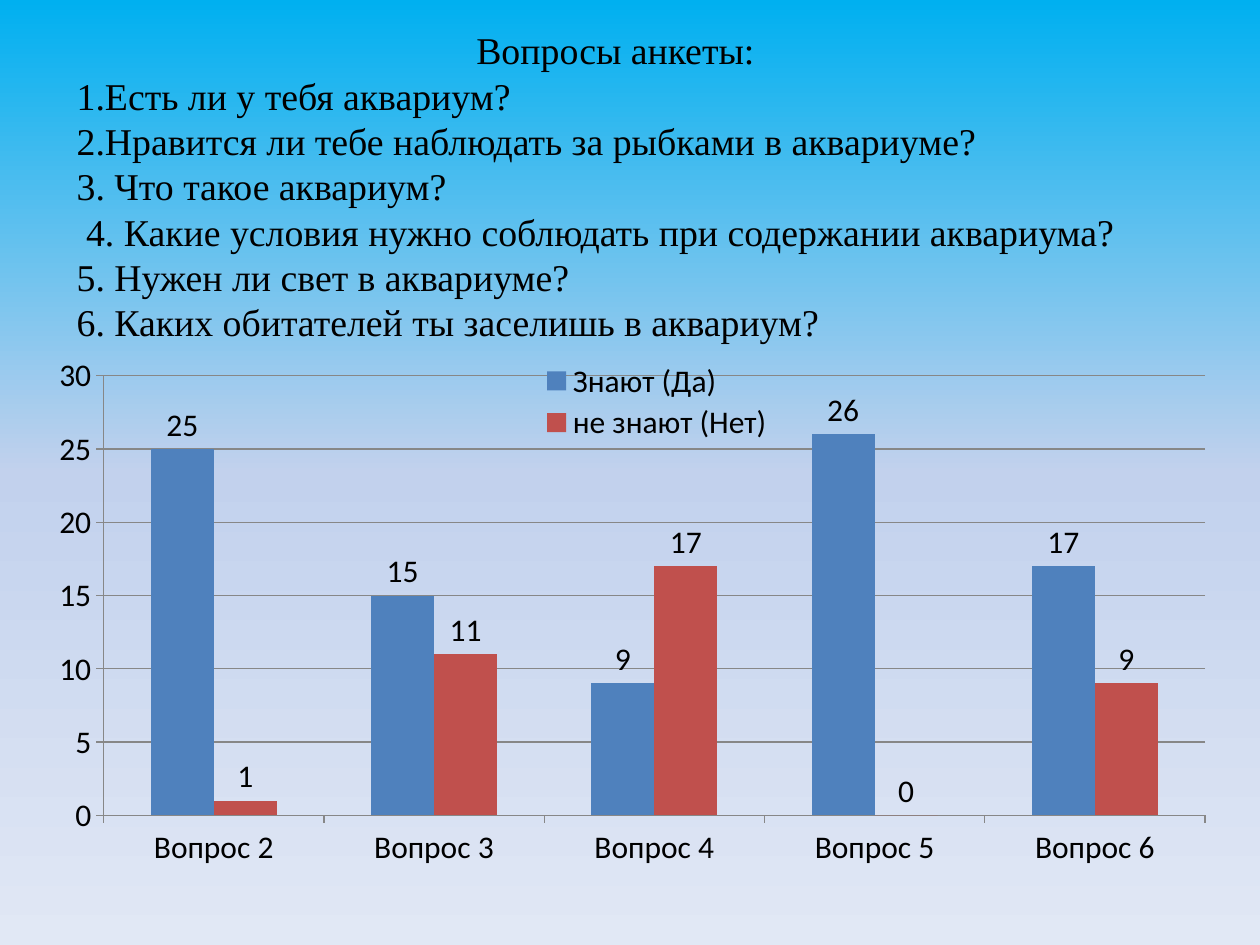
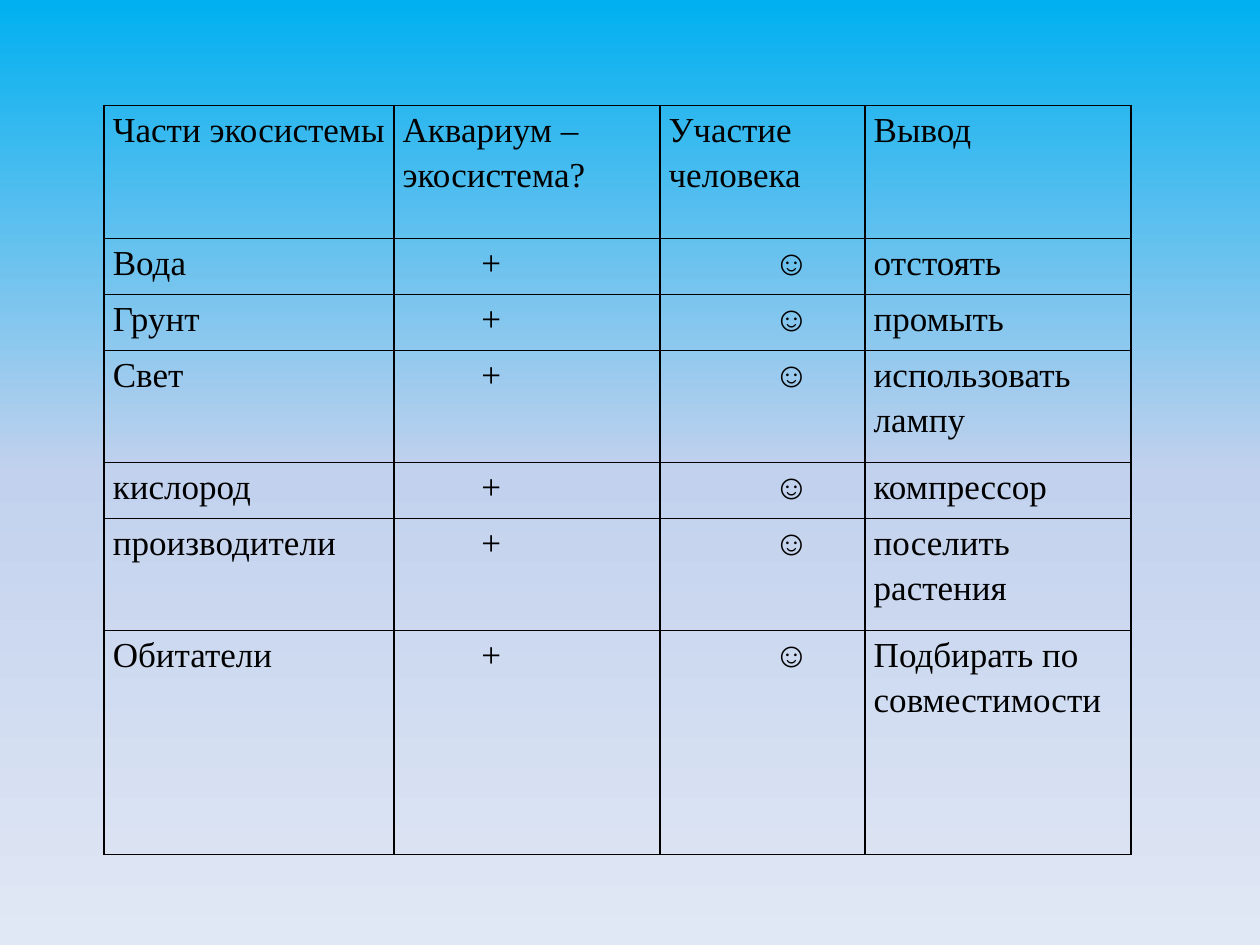
from copy import deepcopy
from dataclasses import dataclass

from pptx import Presentation
from pptx.chart.data import CategoryChartData
from pptx.dml.color import RGBColor
from pptx.enum.chart import XL_CHART_TYPE, XL_LABEL_POSITION, XL_LEGEND_POSITION, XL_TICK_MARK
from pptx.enum.text import MSO_ANCHOR, PP_ALIGN
from pptx.oxml import parse_xml
from pptx.oxml.ns import nsdecls, qn
from pptx.util import Pt

COLUMNS = XL_CHART_TYPE.COLUMN_CLUSTERED
OUTSIDE_END = XL_LABEL_POSITION.OUTSIDE_END
LEGEND_RIGHT = XL_LEGEND_POSITION.RIGHT
TICK_OUTSIDE = XL_TICK_MARK.OUTSIDE
MIDDLE = MSO_ANCHOR.MIDDLE
CENTER, JUSTIFY = PP_ALIGN.CENTER, PP_ALIGN.JUSTIFY


@dataclass(frozen=True)
class Theme:
    gradient: tuple = ((0, "00B0F0"), (0.5, "C2D1ED"), (1, "E1E8F5"))
    text: str = "000000"
    grid: str = "878787"
    series: tuple = ("4F81BD", "C0504D")
    serif: str = "Times New Roman"
    sans: str = "Calibri"
    question_size: float = 21.6
    table_size: float = 20
    chart_size: float = 18


THEME = Theme()

# Survey content
HEADING = "Вопросы анкеты:"
QUESTIONS = [
    "1.Есть ли у тебя аквариум?",
    "2.Нравится ли тебе наблюдать за рыбками в аквариуме?",
    "3. Что такое аквариум?",
    " 4. Какие условия нужно соблюдать при содержании аквариума?",
    "5. Нужен ли свет в аквариуме?",
    "6. Каких обитателей ты заселишь в аквариум?",
]
ANSWERS = {"Знают (Да)": (25, 15, 9, 26, 17), "не знают (Нет)": (1, 11, 17, 0, 9)}

# Ecosystem content
HEADERS = ["Части экосистемы", "Аквариум – экосистема?", "Участие человека", "Вывод"]
CONCLUSIONS = {
    "Вода": "отстоять",
    "Грунт": "промыть",
    "Свет": "использовать лампу",
    "кислород": "компрессор",
    "производители": "поселить растения",
    "Обитатели": "Подбирать по совместимости",
}
COLUMN_WIDTHS = (165.6, 152, 117.2, 152)
COLUMN_INDENTS = (0, 45, 60, 0)
HEADER_HEIGHT, ROW_UNIT = 76, 32
ROW_UNITS = (1, 1, 2, 1, 2, 4)


def set_all(obj, **values):
    for name, value in values.items():
        setattr(obj, name, value)


def style_font(font, name, size):
    set_all(font, name=name, size=Pt(size))
    font.color.rgb = RGBColor.from_string(THEME.text)


def set_indent(p, left, first=0):
    pPr = p._p.get_or_add_pPr()
    pPr.set("marL", str(Pt(left)))
    pPr.set("indent", str(Pt(first)))


def set_background(master):
    fill = master.background.fill
    fill.gradient()
    fill.gradient_angle = 270
    stops = master.element.xpath(".//p:bg//a:gsLst")[0]
    stops.append(deepcopy(stops[0]))
    for stop, (position, color) in zip(fill.gradient_stops, THEME.gradient):
        stop.position = position
        stop.color.rgb = RGBColor.from_string(color)


def add_questions(slide, left, top, width, height):
    tf = slide.shapes.add_textbox(Pt(left), Pt(top), Pt(width), Pt(height)).text_frame
    set_all(tf, word_wrap=True, vertical_anchor=MIDDLE, margin_bottom=Pt(27.6))
    for i, text in enumerate([HEADING, *QUESTIONS]):
        p = tf.add_paragraph() if i else tf.paragraphs[0]
        p.alignment = JUSTIFY if i else CENTER
        if i:
            set_indent(p, 36, -36)
        r = p.add_run()
        r.text = text
        style_font(r.font, THEME.serif, THEME.question_size)


# Chart
def set_layout(element, index, target="", **box):
    """Place a chart part by fractions of the chart frame."""
    for old in element.findall(qn("c:layout")):
        element.remove(old)
    inner = f'<c:layoutTarget val="{target}"/>' if target else ""
    modes = "".join(f'<c:{k}Mode val="edge"/>' for k in "xy")
    sizes = "".join(f'<c:{k} val="{v}"/>' for k, v in box.items())
    element.insert(index, parse_xml(
        f'<c:layout {nsdecls("c")}><c:manualLayout>{inner}{modes}{sizes}'
        "</c:manualLayout></c:layout>"))


def style_line(line):
    line.color.rgb = RGBColor.from_string(THEME.grid)
    line.width = Pt(0.75)


def add_answer_chart(slide, left, top, width, height):
    data = CategoryChartData()
    data.categories = [f"Вопрос {n}" for n in range(2, 7)]
    for name, values in ANSWERS.items():
        data.add_series(name, values)
    chart = slide.shapes.add_chart(
        COLUMNS, Pt(left), Pt(top), Pt(width), Pt(height), data).chart
    set_all(chart, has_title=False, has_legend=True)
    style_font(chart.font, THEME.sans, THEME.chart_size)

    set_all(chart.legend, position=LEGEND_RIGHT, include_in_layout=False)
    set_layout(chart.legend._element, 1, x=0.45, y=0.04, w=0.19, h=0.15)
    set_layout(chart._chartSpace.chart.plotArea, 0, "inner",
               x=0.086, y=0.07, w=0.914, h=0.759)

    for axis in (chart.category_axis, chart.value_axis):
        axis.major_tick_mark = TICK_OUTSIDE
        style_line(axis.format.line)
    set_all(chart.value_axis, minimum_scale=0, maximum_scale=30, major_unit=5,
            has_major_gridlines=True)
    style_line(chart.value_axis.major_gridlines.format.line)

    plot = chart.plots[0]
    set_all(plot, gap_width=150, overlap=0, vary_by_categories=False, has_data_labels=True)
    set_all(plot.data_labels, show_value=True, position=OUTSIDE_END)
    for series, color in zip(plot.series, THEME.series):
        series.invert_if_negative = False
        series.format.fill.solid()
        series.format.fill.fore_color.rgb = RGBColor.from_string(color)


# Table
def add_borders(cell):
    tcPr = cell._tc.get_or_add_tcPr()
    for i, side in enumerate(("lnL", "lnR", "lnT", "lnB")):
        tcPr.insert(i, parse_xml(
            f'<a:{side} {nsdecls("a")} w="{Pt(1)}"><a:solidFill>'
            f'<a:srgbClr val="{THEME.text}"/></a:solidFill></a:{side}>'))


def fill_cell(cell, text, indent):
    set_all(cell, margin_left=Pt(5), margin_right=Pt(5), margin_top=0, margin_bottom=0)
    cell.fill.background()
    add_borders(cell)
    p = cell.text_frame.paragraphs[0]
    p.line_spacing = 1.15
    set_indent(p, indent)
    r = p.add_run()
    r.text = text
    style_font(r.font, THEME.serif, THEME.table_size)


def add_ecosystem_table(slide, left, top):
    rows = [HEADERS] + [[part, "+", "☺", end] for part, end in CONCLUSIONS.items()]
    heights = [HEADER_HEIGHT] + [ROW_UNIT * n for n in ROW_UNITS]
    table = slide.shapes.add_table(
        len(rows), len(HEADERS), Pt(left), Pt(top),
        Pt(sum(COLUMN_WIDTHS)), Pt(sum(heights))).table
    set_all(table, first_row=False, horz_banding=False)
    for column, width in zip(table.columns, COLUMN_WIDTHS):
        column.width = Pt(width)
    for i, (texts, height) in enumerate(zip(rows, heights)):
        table.rows[i].height = Pt(height)
        for j, text in enumerate(texts):
            fill_cell(table.cell(i, j), text, COLUMN_INDENTS[j] if i else 0)


def main():
    prs = Presentation()
    set_all(prs, slide_width=Pt(720), slide_height=Pt(540))
    set_background(prs.slide_master)
    blank = prs.slide_layouts[6]

    # Survey questions and answers
    s = prs.slides.add_slide(blank)
    add_answer_chart(s, 0, 191.5, 689, 331.2)
    add_questions(s, 36.7, 15.1, 630, 206)

    # Aquarium as an ecosystem
    s = prs.slides.add_slide(blank)
    add_ecosystem_table(s, 59.5, 60.4)

    prs.save("out.pptx")


if __name__ == "__main__":
    main()
